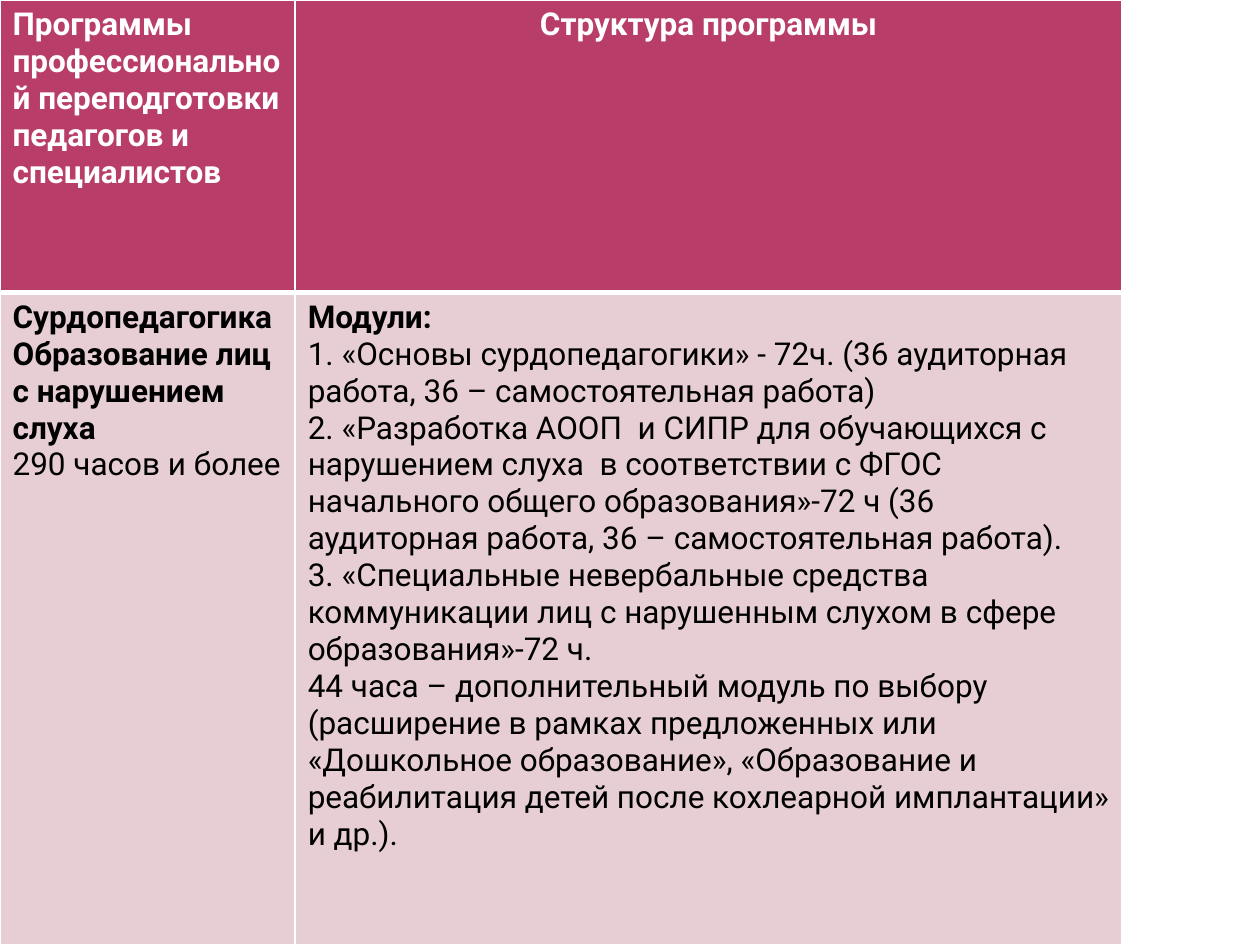
from lxml.etree import SubElement
from pptx import Presentation
from pptx.dml.color import RGBColor
from pptx.enum.text import PP_ALIGN
from pptx.oxml.ns import qn
from pptx.util import Cm, Pt

COLORS = {"header": "B83D68", "body": "E6CED4", "white": "FFFFFF", "black": "000000"}
COLUMN_WIDTHS = [Cm(5.95), Cm(16.67)]
ROW_HEIGHTS = [Cm(5.9), Cm(13.15)]

# Each paragraph is (text, bold)
HEADINGS = [
    [("Программы профессиональной переподготовки педагогов и специалистов", True)],
    [("Структура программы", True)],
]
PROGRAM = [
    ("Сурдопедагогика\vОбразование лиц с нарушением слуха", True),
    ("290 часов и более", False),
]
MODULES = [
    ("Модули:", True),
    ("1. «Основы сурдопедагогики» - 72ч. (36 аудиторная работа, "
     "36 – самостоятельная работа)", False),
    ("2. «Разработка АООП  и СИПР для обучающихся с нарушением слуха  в соответствии "
     "с ФГОС начального общего образования»-72 ч (36 аудиторная работа, "
     "36 – самостоятельная работа).", False),
    ("3. «Специальные невербальные средства коммуникации лиц с нарушенным слухом "
     "в сфере образования»-72 ч.", False),
    ("44 часа – дополнительный модуль по выбору (расширение в рамках предложенных или "
     "«Дошкольное образование», «Образование и реабилитация детей после кохлеарной "
     "имплантации» и др.).", False),
]


def write_paragraph(paragraph, text, *, bold=False, color="black", align=PP_ALIGN.LEFT):
    paragraph.text = text
    paragraph.alignment = align
    for run in paragraph.runs:
        run.font.name = "Roboto"
        run.font.size = Pt(18)
        run.font.bold = bold
        run.font.color.rgb = RGBColor.from_string(COLORS[color])


def set_borders(cell, top=1, bottom=1):
    properties = cell._tc.get_or_add_tcPr()
    for side, width in (("L", 1), ("R", 1), ("T", top), ("B", bottom)):
        line = SubElement(properties, qn(f"a:ln{side}"), w=str(Pt(width)))
        fill = SubElement(line, qn("a:solidFill"))
        SubElement(fill, qn("a:srgbClr"), val=COLORS["white"])


def fill_cell(cell, paragraphs, *, background, top=1, bottom=1, **text_format):
    set_borders(cell, top, bottom)
    cell.fill.solid()
    cell.fill.fore_color.rgb = RGBColor.from_string(COLORS[background])
    frame = cell.text_frame
    for index, (text, bold) in enumerate(paragraphs):
        paragraph = frame.add_paragraph() if index else frame.paragraphs[0]
        write_paragraph(paragraph, text, bold=bold, **text_format)


def add_program_table(slide):
    programs = slide.shapes.add_table(
        2, 2, 0, 0, sum(COLUMN_WIDTHS), sum(ROW_HEIGHTS)).table
    for column, width in zip(programs.columns, COLUMN_WIDTHS):
        column.width = width
    for row, height in zip(programs.rows, ROW_HEIGHTS):
        row.height = height

    # Header row, set off by a thick rule
    for index, align in enumerate((PP_ALIGN.LEFT, PP_ALIGN.CENTER)):
        fill_cell(programs.cell(0, index), HEADINGS[index], background="header",
                  bottom=3, color="white", align=align)

    # Program and its modules
    for index, paragraphs in enumerate((PROGRAM, MODULES)):
        fill_cell(programs.cell(1, index), paragraphs, background="body", top=3)


def main():
    presentation = Presentation()
    presentation.slide_width = Cm(25.4)
    presentation.slide_height = Cm(19.05)
    slide = presentation.slides.add_slide(presentation.slide_layouts[6])
    add_program_table(slide)
    presentation.save("out.pptx")


if __name__ == "__main__":
    main()
